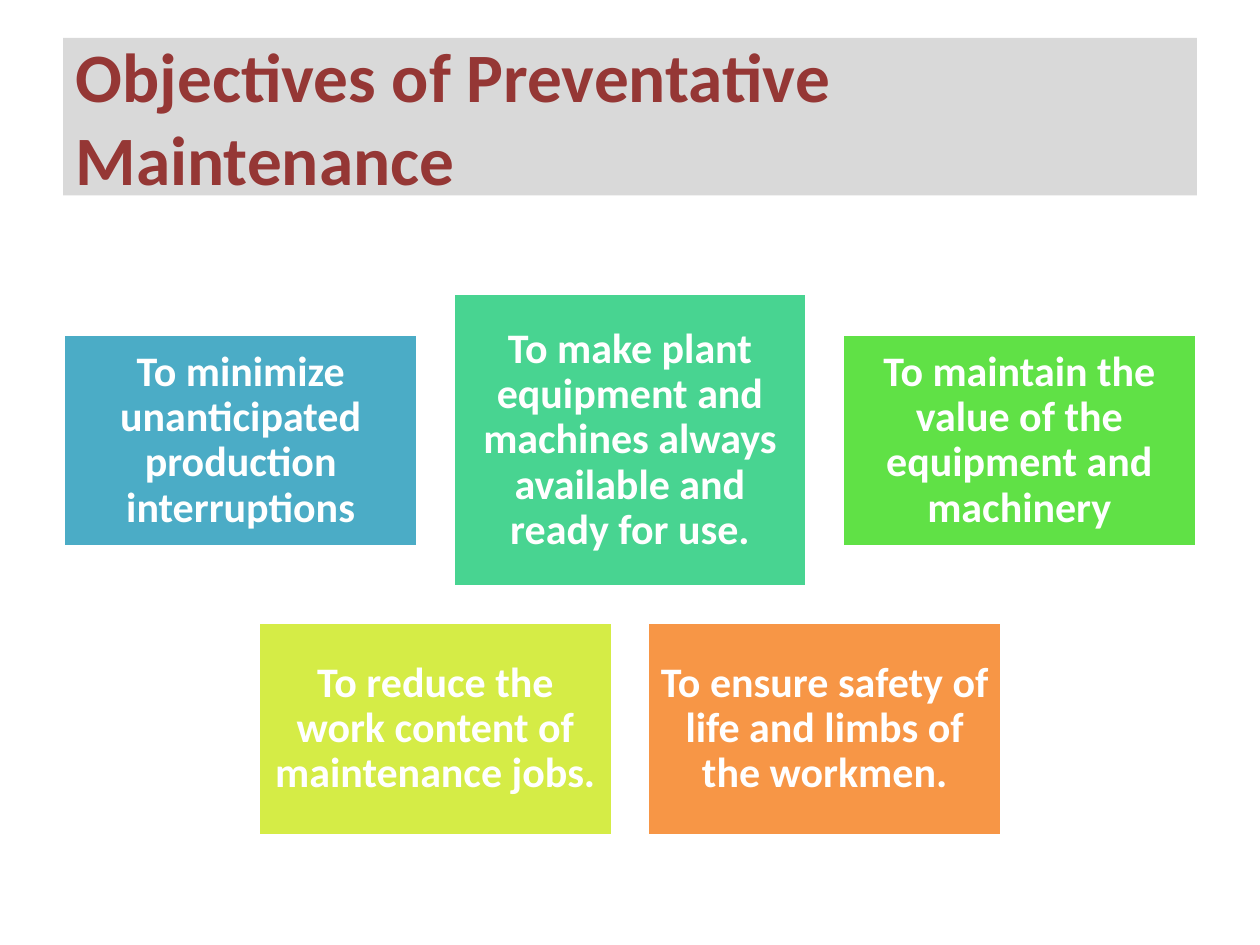
from pptx import Presentation
from pptx.dml.color import RGBColor
from pptx.enum.shapes import MSO_SHAPE
from pptx.enum.text import MSO_ANCHOR, MSO_AUTO_SIZE, PP_ALIGN
from pptx.util import Inches, Pt

SLIDE_WIDTH, SLIDE_HEIGHT = 10, 7.5
BOX_WIDTH, BOX_HEIGHT, TALL_HEIGHT = 2.81, 1.69, 2.33
GAP = 0.28
ROWS_TOP = 2.33
TITLE_ONLY_LAYOUT = 5

OBJECTIVE_ROWS = [
    [
        ("To minimize unanticipated production interruptions", "4BACC6", BOX_HEIGHT),
        ("To make plant equipment and machines always available and ready for use.",
         "48D491", TALL_HEIGHT),
        ("To maintain the value of the equipment and machinery", "60E146", BOX_HEIGHT),
    ],
    [
        ("To reduce the work content of maintenance jobs.", "D5EC46", BOX_HEIGHT),
        ("To ensure safety of life and limbs of the workmen.", "F79646", BOX_HEIGHT),
    ],
]


def color(hex_string):
    return RGBColor.from_string(hex_string)


def fill_shape(shape, hex_string):
    shape.fill.solid()
    shape.fill.fore_color.rgb = color(hex_string)


def write_text(shape, text, size, hex_string, alignment):
    text_frame = shape.text_frame
    text_frame.text = text
    text_frame.word_wrap = True
    text_frame.auto_size = MSO_AUTO_SIZE.NONE
    text_frame.vertical_anchor = MSO_ANCHOR.MIDDLE
    paragraph = text_frame.paragraphs[0]
    paragraph.alignment = alignment
    font = paragraph.runs[0].font
    font.name = "Calibri"
    font.size = Pt(size)
    font.bold = True
    font.color.rgb = color(hex_string)
    return paragraph


def format_title(slide, text):
    title = slide.shapes.title
    title.left, title.top = Inches(SLIDE_WIDTH * 0.05), Inches(SLIDE_HEIGHT * 0.04)
    title.width, title.height = Inches(SLIDE_WIDTH * 0.9), Inches(1.25)
    fill_shape(title, "D9D9D9")
    write_text(title, text, 39.6, "953735", PP_ALIGN.LEFT)


def add_objective(slide, text, fill, left, top, height):
    shape = slide.shapes.add_shape(
        MSO_SHAPE.RECTANGLE, Inches(left), Inches(top), Inches(BOX_WIDTH), Inches(height)
    )
    shape.shadow.inherit = False
    fill_shape(shape, fill)
    shape.line.color.rgb = color("FFFFFF")
    shape.line.width = Pt(2)
    paragraph = write_text(shape, text, 24, "FFFFFF", PP_ALIGN.CENTER)
    paragraph.line_spacing = 0.9
    text_frame = shape.text_frame
    text_frame.margin_left = text_frame.margin_right = Inches(0.09)
    text_frame.margin_top = text_frame.margin_bottom = Inches(0.09)


def add_objective_rows(slide, rows):
    top = ROWS_TOP
    for row in rows:
        row_height = max(height for _, _, height in row)
        row_width = len(row) * (BOX_WIDTH + GAP) - GAP
        first_left = (SLIDE_WIDTH - row_width) / 2
        for column, (text, fill, height) in enumerate(row):
            left = first_left + column * (BOX_WIDTH + GAP)
            add_objective(slide, text, fill, left, top + (row_height - height) / 2, height)
        top += row_height + GAP


def main():
    presentation = Presentation()
    presentation.slide_width = Inches(SLIDE_WIDTH)
    presentation.slide_height = Inches(SLIDE_HEIGHT)
    slide = presentation.slides.add_slide(presentation.slide_layouts[TITLE_ONLY_LAYOUT])
    format_title(slide, "Objectives of Preventative Maintenance")
    add_objective_rows(slide, OBJECTIVE_ROWS)
    presentation.save("out.pptx")


if __name__ == "__main__":
    main()
